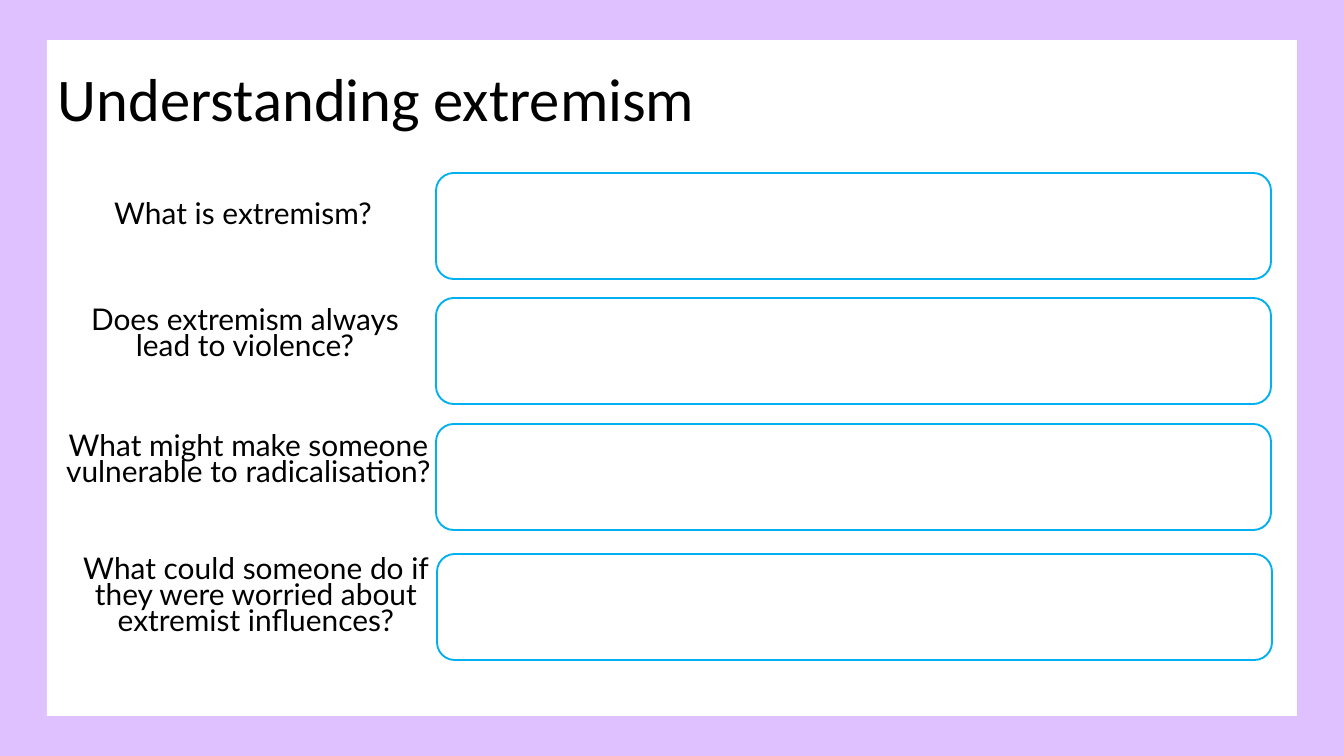
import pptx
import pptx.dml.color
import pptx.enum.shapes
import pptx.enum.text
import pptx.util

PX = 914400 / 67.2
WIDE, HIGH = 1344, 756
LILAC, WHITE, BLACK, BLUE = "E0C1FF", "FFFFFF", "000000", "00B0F0"

TITLE = "Understanding extremism"
# question, its place (left, top, width, height), line pitch in points, answer box left and top
ROWS = [
    ("What is extremism?", (79, 191, 328, 43), None, (436, 173)),
    ("Does extremism always lead to violence?", (81, 307, 328, 60), 28, (436, 298)),
    ("What might make someone vulnerable to radicalisation?", (58, 433, 381, 60), 28, (436, 424)),
    ("What could someone do if they were worried about extremist influences?",
     (73, 556, 366, 89), 28, (437, 554)),
]
ANSWER = (835, 106)

SHAPES = pptx.enum.shapes.MSO_SHAPE
ALIGN = pptx.enum.text.PP_ALIGN


def px(num):
    return pptx.util.Emu(round(num * PX))


def color(code):
    return pptx.dml.color.RGBColor.from_string(code)


def add_text(slide, text, place, size, font, align=ALIGN.LEFT, pitch=None, inset=True):
    box = slide.shapes.add_textbox(*map(px, place))
    frame = box.text_frame
    frame.word_wrap = True
    frame.auto_size = pptx.enum.text.MSO_AUTO_SIZE.SHAPE_TO_FIT_TEXT
    if not inset:
        frame.margin_left = frame.margin_right = 0
        frame.margin_top = frame.margin_bottom = 0
    para = frame.paragraphs[0]
    para.alignment = align
    if pitch:
        para.line_spacing = pptx.util.Pt(pitch)
    run = para.add_run()
    run.text = text
    run.font.name = font
    run.font.size = pptx.util.Pt(size)
    run.font.color.rgb = color(BLACK)


def add_box(slide, kind, place, fill=None, line=None):
    box = slide.shapes.add_shape(kind, *map(px, place))
    box.shadow.inherit = False
    if fill:
        box.fill.solid()
        box.fill.fore_color.rgb = color(fill)
    else:
        box.fill.background()
    if line:
        box.line.color.rgb = color(line)
        box.line.width = pptx.util.Pt(2)
    else:
        box.line.fill.background()


def main():
    deck = pptx.Presentation()
    deck.slide_width, deck.slide_height = px(WIDE), px(HIGH)
    slide = deck.slides.add_slide(deck.slide_layouts[6])
    back = slide.background.fill
    back.solid()
    back.fore_color.rgb = color(LILAC)

    add_box(slide, SHAPES.RECTANGLE, (47, 40, 1250, 676), fill=WHITE)
    add_text(slide, TITLE, (58, 70, 1215, 66), 64.9, "Calibri", pitch=68.2, inset=False)
    for text, place, pitch, corner in ROWS:
        add_text(slide, text, place, 32, "Lato", ALIGN.CENTER, pitch)
        add_box(slide, SHAPES.ROUNDED_RECTANGLE, corner + ANSWER, line=BLUE)
    deck.save("out.pptx")


if __name__ == "__main__":
    main()
